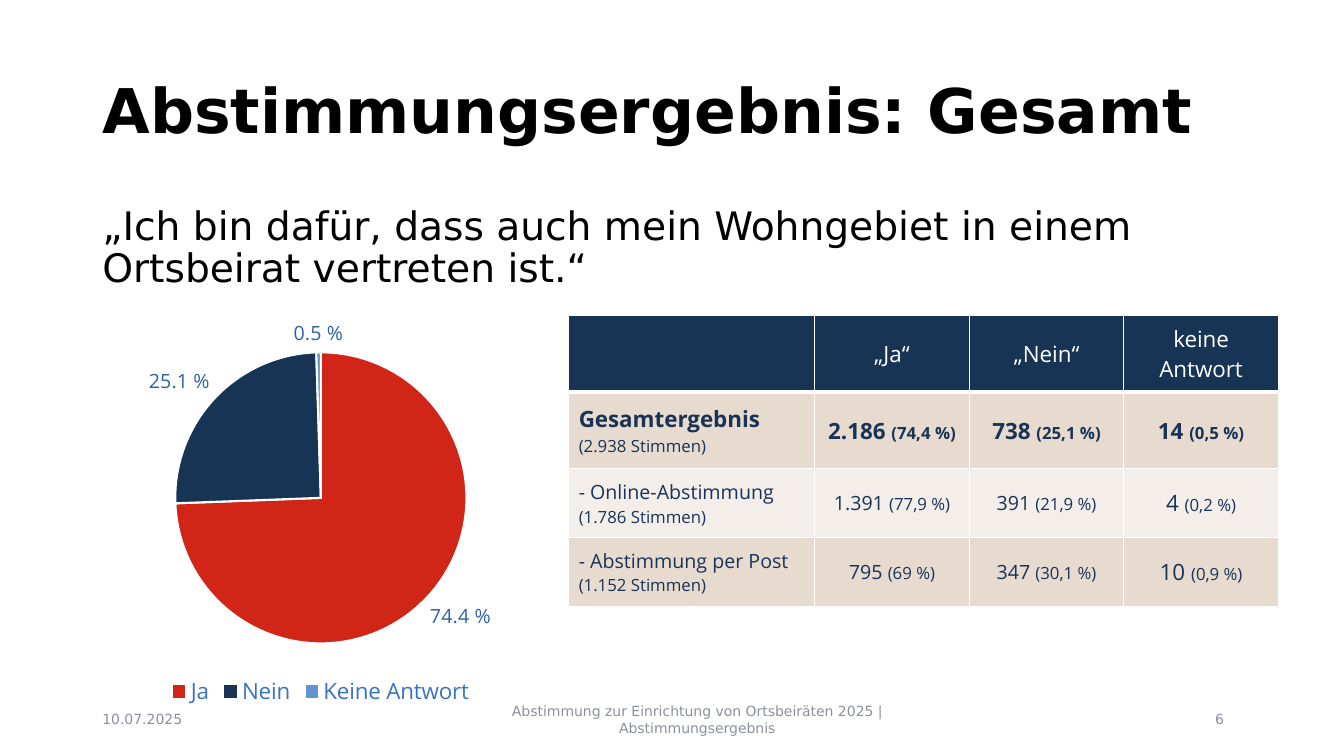
from lxml import etree
from pptx import Presentation
from pptx.chart.data import CategoryChartData
from pptx.dml.color import RGBColor
from pptx.enum.chart import XL_CHART_TYPE, XL_LABEL_POSITION, XL_LEGEND_POSITION
from pptx.enum.text import MSO_ANCHOR, MSO_AUTO_SIZE, PP_ALIGN
from pptx.oxml import parse_xml
from pptx.oxml.ns import nsdecls, qn
from pptx.util import Inches, Pt

PIE = XL_CHART_TYPE.PIE
OUTSIDE = XL_LABEL_POSITION.OUTSIDE_END
BELOW = XL_LEGEND_POSITION.BOTTOM
NO_AUTO_SIZE = MSO_AUTO_SIZE.NONE
TOP, MIDDLE = MSO_ANCHOR.TOP, MSO_ANCHOR.MIDDLE
LEFT, CENTER, RIGHT = PP_ALIGN.LEFT, PP_ALIGN.CENTER, PP_ALIGN.RIGHT

BLACK = RGBColor(0x00, 0x00, 0x00)
WHITE = RGBColor(0xFF, 0xFF, 0xFF)
RED = RGBColor(0xD1, 0x26, 0x17)
NAVY = RGBColor(0x17, 0x34, 0x55)
TEXT_NAVY = RGBColor(0x19, 0x33, 0x56)
LIGHT_BLUE = RGBColor(0x64, 0x93, 0xD2)
LEGEND_BLUE = RGBColor(0x38, 0x73, 0xC2)
LABEL_BLUE = RGBColor(0x2F, 0x61, 0xA3)
SAND = RGBColor(0xE7, 0xDB, 0xD0)
PALE_SAND = RGBColor(0xF3, 0xEE, 0xE9)
GREY = RGBColor(0x8C, 0x90, 0x9A)

HEADING_FONT, DATA_FONT = "DejaVu Sans", "Open Sans"
GRID_COLUMNS, GRID_ROWS = 160, 90


def set_font(font, name, size, color, bold=False):
    values = {"name": name, "size": Pt(size), "bold": bold}
    for attribute, value in values.items():
        setattr(font, attribute, value)
    font.color.rgb = color


class ResultSlide:
    """Places elements on a slide by columns and rows of a grid."""

    def __init__(self, presentation):
        self.slide = presentation.slides.add_slide(presentation.slide_layouts[5])
        self.column = presentation.slide_width / GRID_COLUMNS
        self.row = presentation.slide_height / GRID_ROWS

    def area(self, left, top, width, height):
        return (round(left * self.column), round(top * self.row),
                round(width * self.column), round(height * self.row))

    def fill_text(self, shape, text, size, color=BLACK, bold=False,
                  align=LEFT, anchor=MIDDLE, line_spacing=1.0):
        frame = shape.text_frame
        frame_format = {"word_wrap": True, "auto_size": NO_AUTO_SIZE,
                        "vertical_anchor": anchor, "text": text}
        for attribute, value in frame_format.items():
            setattr(frame, attribute, value)
        paragraph = frame.paragraphs[0]
        paragraph.alignment = align
        paragraph.line_spacing = line_spacing
        set_font(paragraph.runs[0].font, HEADING_FONT, size, color, bold)

    def title(self, area, text, **style):
        shape = self.slide.shapes.title
        shape.left, shape.top, shape.width, shape.height = self.area(*area)
        self.fill_text(shape, text, **style)

    def text(self, area, text, **style):
        self.fill_text(self.slide.shapes.add_textbox(*self.area(*area)), text, **style)

    def pie(self, area, shares, colors, plot_layout):
        data = CategoryChartData()
        data.categories = list(shares)
        data.add_series("Series 1", list(shares.values()))
        chart = self.slide.shapes.add_chart(PIE, *self.area(*area), data).chart
        set_font(chart.font, DATA_FONT, 18, TEXT_NAVY)
        chart.has_title = False
        chart.has_legend = True
        chart.legend.position = BELOW
        chart.legend.include_in_layout = False
        set_font(chart.legend.font, DATA_FONT, 16, LEGEND_BLUE)

        plot = chart.plots[0]
        plot.vary_by_categories = True
        for index, color in enumerate(colors):
            point_format = plot.series[0].points[index].format
            point_format.fill.solid()
            point_format.fill.fore_color.rgb = color
            point_format.line.color.rgb = WHITE
            point_format.line.width = Pt(1.5)
        labels = plot.series[0].data_labels
        label_format = {"show_value": True, "show_percentage": False,
                        "number_format": "0.0\\ %",
                        "number_format_is_linked": False, "position": OUTSIDE}
        for attribute, value in label_format.items():
            setattr(labels, attribute, value)
        set_font(labels.font, DATA_FONT, 14, LABEL_BLUE)

        # Fixed position of the pie inside the chart
        plot_area = chart.element.find(".//" + qn("c:plotArea"))
        for layout in plot_area.findall(qn("c:layout")):
            plot_area.remove(layout)
        settings = {"layoutTarget": "inner", "xMode": "edge", "yMode": "edge",
                    **plot_layout}
        parts = "".join(f'<c:{tag} val="{value}"/>' for tag, value in settings.items())
        plot_area.insert(0, parse_xml(
            f'<c:layout {nsdecls("c")}><c:manualLayout>{parts}'
            '</c:manualLayout></c:layout>'))

    def table(self, left, top, widths, heights, rows, fills):
        frame = self.slide.shapes.add_table(
            len(heights), len(widths),
            *self.area(left, top, sum(widths), sum(heights)))
        table = frame.table
        table.horz_banding = False
        for column, width in zip(table.columns, widths):
            column.width = round(width * self.column)
        for row, height in zip(table.rows, heights):
            row.height = round(height * self.row)
        for row_index, (cells, fill) in enumerate(zip(rows, fills)):
            header = row_index == 0
            for column_index, runs in enumerate(cells):
                cell = table.cell(row_index, column_index)
                cell.vertical_anchor = MIDDLE
                cell.fill.solid()
                cell.fill.fore_color.rgb = fill
                self.borders(cell, 3 if header else 1)
                self.fill_cell(cell, runs, LEFT if column_index == 0 else CENTER,
                               WHITE if header else TEXT_NAVY)

    def fill_cell(self, cell, runs, align, color):
        paragraph = cell.text_frame.paragraphs[0]
        paragraph.alignment = align
        for text, size, bold in runs:
            if text.startswith("\n"):
                paragraph.add_line_break()
            run = paragraph.add_run()
            run.text = text.lstrip("\n")
            set_font(run.font, DATA_FONT, size, color, bold)

    def borders(self, cell, bottom_width):
        properties = cell._tc.get_or_add_tcPr()
        widths = {"lnL": 1, "lnR": 1, "lnT": 1, "lnB": bottom_width}
        for index, (side, width) in enumerate(widths.items()):
            line = etree.Element(qn(f"a:{side}"), w=str(Pt(width)))
            fill = etree.SubElement(line, qn("a:solidFill"))
            etree.SubElement(fill, qn("a:srgbClr"), val=str(WHITE))
            properties.insert(index, line)


def result_row(name, votes, counts, sizes, bold=False):
    """One table row: a label with its votes, then counts with shares."""
    label = [(name, sizes[0], bold), (f"\n({votes} Stimmen)", 12, False)]
    return [label] + [[(f"{count} ", size, bold), (f"({share} %)", 12, bold)]
                      for (count, share), size in zip(counts, sizes[1:])]


def main():
    presentation = Presentation()
    presentation.slide_width, presentation.slide_height = Inches(13.33), Inches(7.5)
    result = ResultSlide(presentation)

    # Title and question
    result.title((11, 4.8, 138, 17.4), "Abstimmungsergebnis: Gesamt",
                 size=44, bold=True, line_spacing=0.9)
    result.text((11, 24, 138, 57.1),
                "„Ich bin dafür, dass auch mein Wohngebiet in einem "
                "Ortsbeirat vertreten ist.“",
                size=28, anchor=TOP, line_spacing=0.9)

    # Pie chart
    result.pie((-1.2, 35.9, 78.8, 48.7),
               {"Ja": 0.744, "Nein": 0.251, "Keine Antwort": 0.005},
               (RED, NAVY, LIGHT_BLUE),
               {"x": 0.28, "y": 0.12, "w": 0.44, "h": 0.72})

    # Table of results
    header = [[]] + [[(text, 16, False)] for text in ("„Ja“", "„Nein“", "keine Antwort")]
    rows = [
        header,
        result_row("Gesamtergebnis", "2.938",
                   (("2.186", "74,4"), ("738", "25,1"), ("14", "0,5")),
                   (16, 16, 16, 16), bold=True),
        result_row("- Online-Abstimmung", "1.786",
                   (("1.391", "77,9"), ("391", "21,9"), ("4", "0,2")),
                   (14, 14, 14, 16)),
        result_row("- Abstimmung per Post", "1.152",
                   (("795", "69"), ("347", "30,1"), ("10", "0,9")),
                   (14, 14, 14, 16)),
    ]
    result.table(67.7, 37.6, [29.3] + [18.4] * 3, [9.1] * 2 + [8.2] * 2,
                 rows, (NAVY, SAND, PALE_SAND, SAND))

    # Footer
    footer = (
        (11, 36, "10.07.2025", LEFT),
        (53, 60, "Abstimmung zur Einrichtung von Ortsbeiräten 2025 | "
                 "Abstimmungsergebnis", CENTER),
        (118.7, 28.2, "6", RIGHT),
    )
    for left, width, text, align in footer:
        result.text((left, 83.2, width, 4.8), text, size=10, color=GREY, align=align)

    presentation.save("out.pptx")


if __name__ == "__main__":
    main()
